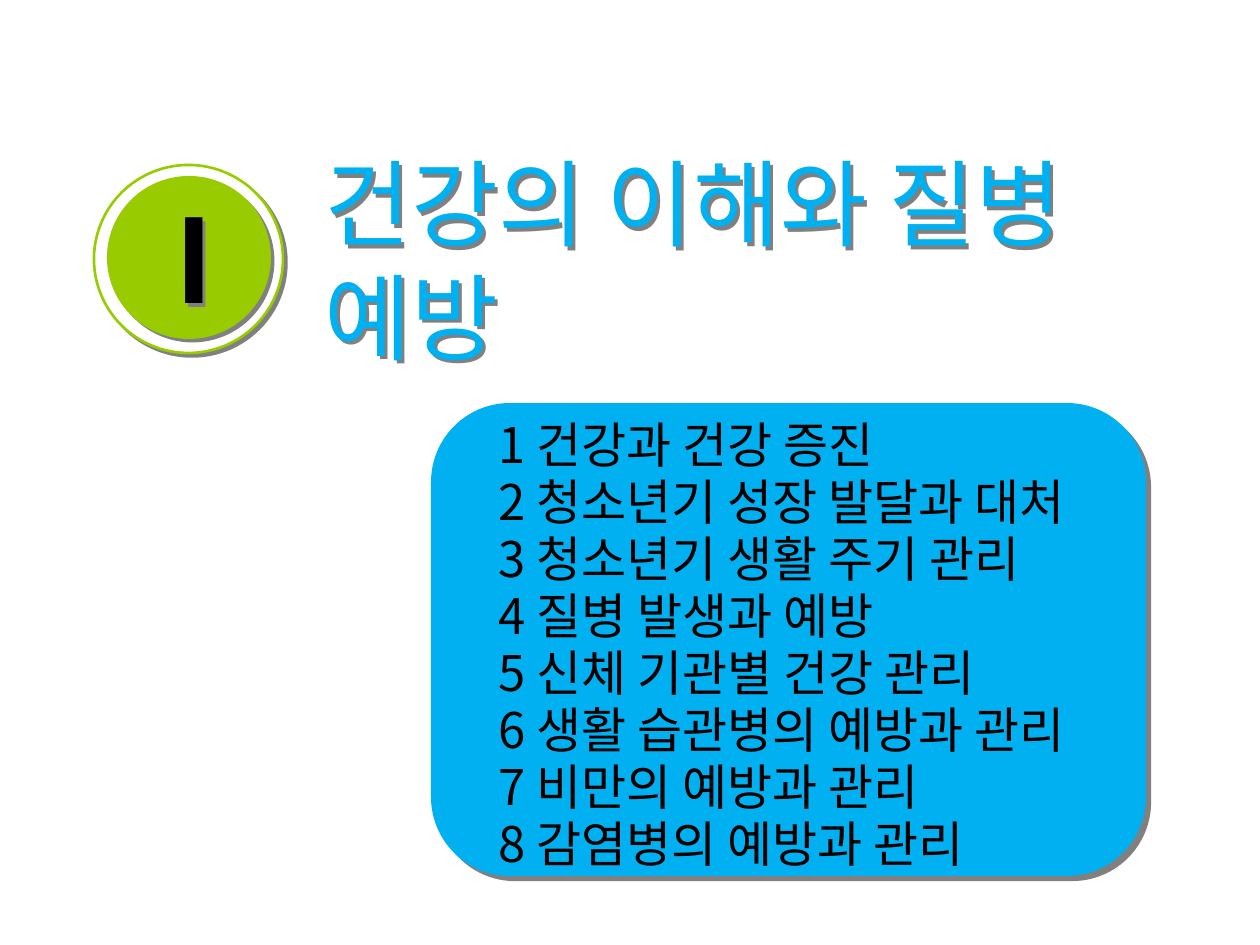
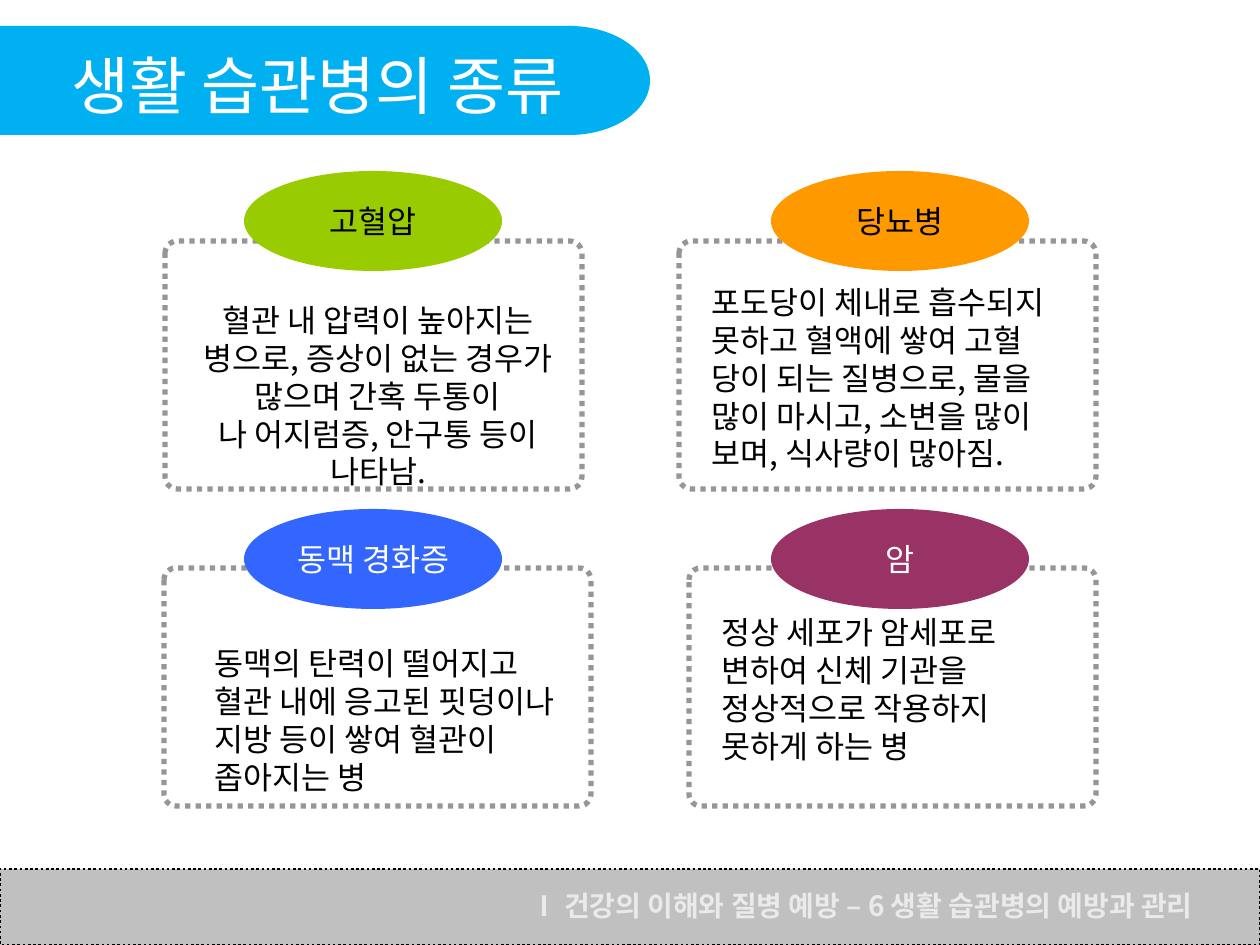
from lxml import etree
from pptx import Presentation
from pptx.dml.color import RGBColor
from pptx.enum.dml import MSO_LINE
from pptx.enum.shapes import MSO_SHAPE as SHAPE
from pptx.enum.text import MSO_ANCHOR as ANCHOR, PP_ALIGN as ALIGN
from pptx.oxml.ns import qn
from pptx.util import Pt

PX = 914400 / 126
FONT = "Noto Sans CJK KR"
BLUE, GREEN, ORANGE, ROYAL, PLUM = "00B0F0", "99CC00", "FF9900", "3366FF", "993366"
BLACK, WHITE, SILVER, GRAY, SHADOW, PALE = (
    "000000", "FFFFFF", "C0C0C0", "969696", "808080", "EAEAEA")


def px(*lengths):
    return [round(n * PX) for n in lengths]


def color(hex_code):
    return RGBColor.from_string(hex_code)


def add_shadow(sp, distance):
    """Hard shadow towards the lower right, distance in points."""
    sp.shadow.inherit = False
    effects = sp._element.spPr.find(qn("a:effectLst"))
    outer = etree.SubElement(effects, qn("a:outerShdw"), blurRad="0",
                             dist=str(Pt(distance)), dir="2700000",
                             algn="ctr", rotWithShape="0")
    etree.SubElement(outer, qn("a:srgbClr"), val=SHADOW)


def write(sp, text, size=18, fill=BLACK, bold=False, align=ALIGN.LEFT,
          anchor=ANCHOR.TOP, wrap=True, spacing=None):
    tf = sp.text_frame
    tf.word_wrap = wrap
    tf.vertical_anchor = anchor
    for i, line in enumerate(text.split("\n")):
        p = tf.paragraphs[0] if i == 0 else tf.add_paragraph()
        p.alignment = align
        if spacing:
            p.line_spacing = spacing
        r = p.add_run()
        r.text = line
        r.font.size, r.font.bold, r.font.name = Pt(size), bold, FONT
        r.font.color.rgb = color(fill)
        etree.SubElement(r._r.get_or_add_rPr(), qn("a:ea"), typeface=FONT)


def add_text(slide, box, text, **style):
    sp = slide.shapes.add_textbox(*px(*box))
    write(sp, text, **style)
    return sp


def add_shape(slide, kind, box, fill=None, line=None, width=1.5, dotted=False,
              radius=None, shadow=0):
    sp = slide.shapes.add_shape(kind, *px(*box))
    sp.shadow.inherit = False
    if shadow:
        add_shadow(sp, shadow)
    if fill:
        sp.fill.solid()
        sp.fill.fore_color.rgb = color(fill)
    else:
        sp.fill.background()
    if line:
        sp.line.color.rgb = color(line)
        sp.line.width = Pt(width)
        if dotted:
            sp.line.dash_style = MSO_LINE.ROUND_DOT
    else:
        sp.line.fill.background()
    if radius is not None:
        sp.adjustments[0] = radius
    return sp


def chapter_badge(slide, box, numeral):
    x, y, w, h = box
    add_shape(slide, SHAPE.OVAL, box, WHITE, line=GREEN, shadow=2.8)
    add_shape(slide, SHAPE.OVAL, (x + 13, y + 11, w - 25, h - 25), GREEN, shadow=2.8)
    sp = add_text(slide, (x + 30, y + 17, 118, 152), numeral,
                  size=66, bold=True, align=ALIGN.CENTER)
    add_shadow(sp, 2.8)


def contents_panel(slide, box, topics):
    x, y, w, h = box
    add_shape(slide, SHAPE.ROUNDED_RECTANGLE, box, BLUE, radius=0.167, shadow=4.2)
    pitch = 57
    for i, topic in enumerate(topics):
        button = add_shape(slide, SHAPE.ACTION_BUTTON_CUSTOM,
                           (x + 55, y + 21 + i * pitch, w - 70, 40))
        write(button, f"{i + 1} {topic}", size=28, anchor=ANCHOR.MIDDLE, wrap=False)


def heading_band(slide, box, text):
    x, y, w, h = box
    cap = 161
    # Rounded end, centred a little inside the bar's right edge
    add_shape(slide, SHAPE.OVAL, (x + w - 87, y, cap, h), BLUE)
    bar = add_shape(slide, SHAPE.RECTANGLE, box, BLUE)
    write(bar, text, size=36, fill=WHITE, align=ALIGN.RIGHT,
          anchor=ANCHOR.MIDDLE, wrap=False, spacing=1.1)


def footer_band(slide, box, text):
    x, y, w, h = box
    add_shape(slide, SHAPE.RECTANGLE, box, SILVER, line=BLACK, dotted=True)
    add_text(slide, (x + 404, y + 8, w - 459, h - 20), text, size=16, fill=PALE,
             bold=True, align=ALIGN.RIGHT, anchor=ANCHOR.MIDDLE)


def disease_card(slide, frame, label_at, body_at, label, body, fill,
                 label_color=BLACK, align=ALIGN.LEFT):
    """Dotted frame with an oval label; label and body are offset from the frame."""
    x, y, w, h = frame
    add_shape(slide, SHAPE.ROUNDED_RECTANGLE, frame, line=GRAY, width=3,
              dotted=True, radius=0.05)
    dx, dy = body_at
    add_text(slide, (x + dx, y + dy, 380, h - dy), body, align=align)
    dx, dy = label_at
    oval = add_shape(slide, SHAPE.OVAL, (x + dx, y + dy, 258, 100), fill)
    write(oval, label, fill=label_color, align=ALIGN.CENTER,
          anchor=ANCHOR.MIDDLE, wrap=False)


def chapter_slide(slide):
    chapter_badge(slide, (94, 165, 189, 188), "Ⅰ")
    title = add_text(slide, (312, 139, 863, 242), "건강의 이해와 질병 예방",
                     size=54, fill=BLUE)
    add_shadow(title, 2.8)
    contents_panel(slide, (431, 403, 715, 473), [
        "건강과 건강 증진", "청소년기 성장 발달과 대처", "청소년기 생활 주기 관리",
        "질병 발생과 예방", "신체 기관별 건강 관리", "생활 습관병의 예방과 관리",
        "비만의 예방과 관리", "감염병의 예방과 관리"])


def disease_slide(slide):
    heading_band(slide, (0, 26, 576, 109), "생활 습관병의 종류")
    footer_band(slide, (0, 869, 1260, 76),
                "Ⅰ 건강의 이해와 질병 예방 – 6 생활 습관병의 예방과 관리")
    disease_card(slide, (165, 241, 417, 248), (79, -70), (23, 54), "고혈압",
                 "혈관 내 압력이 높아지는 병으로, 증상이 없는 경우가 많으며 간혹 두통이\n"
                 "나 어지럼증, 안구통 등이 나타남.", GREEN, align=ALIGN.CENTER)
    disease_card(slide, (679, 241, 417, 248), (92, -70), (20, 36), "당뇨병",
                 "포도당이 체내로 흡수되지 못하고 혈액에 쌓여 고혈\n"
                 "당이 되는 질병으로, 물을 많이 마시고, 소변을 많이 보며, 식사량이 많아짐.",
                 ORANGE)
    disease_card(slide, (164, 568, 427, 238), (80, -59), (38, 70), "동맥 경화증",
                 "동맥의 탄력이 떨어지고 혈관 내에 응고된 핏덩이나 지방 등이 쌓여 혈관이 "
                 "좁아지는 병", ROYAL, label_color=WHITE)
    disease_card(slide, (689, 568, 407, 238), (82, -59), (20, 39), "암",
                 "정상 세포가 암세포로 변하여 신체 기관을 정상적으로 작용하지 못하게 하는 병",
                 PLUM, label_color=WHITE)


def main():
    prs = Presentation()
    prs.slide_width, prs.slide_height = px(1260, 945)
    for build in (chapter_slide, disease_slide):
        build(prs.slides.add_slide(prs.slide_layouts[6]))
    prs.save("out.pptx")


if __name__ == "__main__":
    main()
